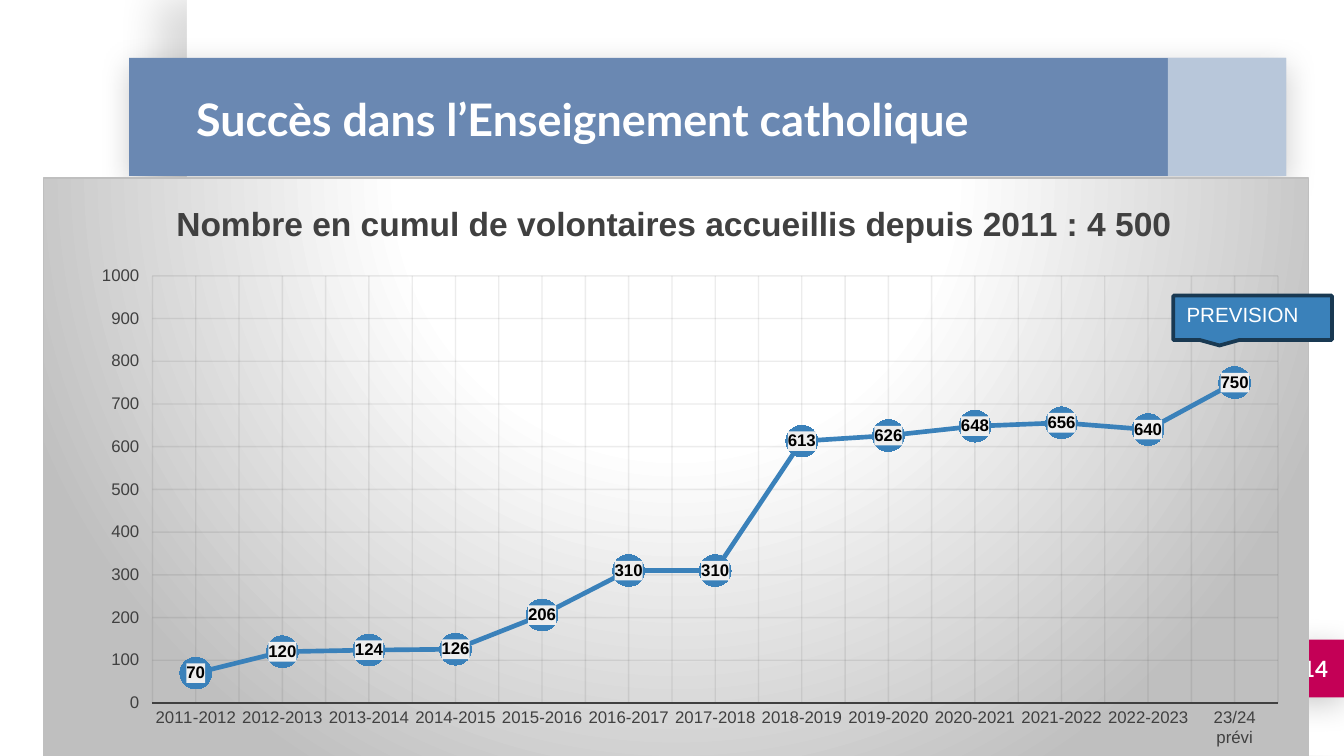
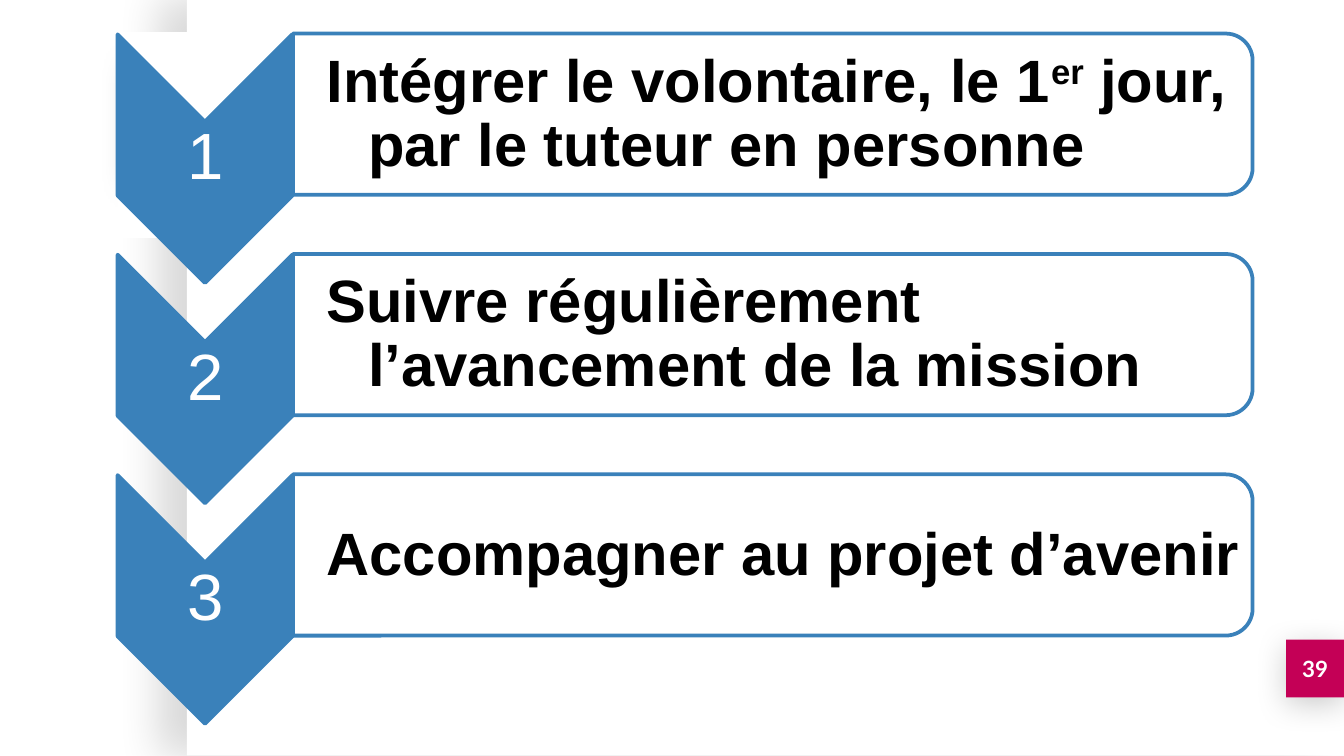
"""Build two slides: volunteer numbers as a line chart and three tutoring steps."""
import pptx
import pptx.chart.data
import pptx.dml.color
import pptx.enum.chart
import pptx.enum.shapes
import pptx.enum.text
import pptx.oxml
import pptx.oxml.ns
import pptx.util

PX = 9144
COLORS = {
    "white": "FFFFFF",
    "black": "000000",
    "blue": "3A81BA",
    "navy": "193952",
    "band": "6A88B2",
    "pink": "C40056",
    "silver": "BFBFBF",
    "label": "EEEEEE",
    "text": "404040",
    "grid": "0D0D0D",
}
SHAPES = pptx.enum.shapes.MSO_SHAPE
ALIGN = pptx.enum.text.PP_ALIGN
ANCHOR = pptx.enum.text.MSO_ANCHOR
PAGE_SHADOW = (15, 22.5, 15, 180)
BAND_SHADOW = (20, 16.9, 3.8, 90)
NUMBER_BOX = (957, 476, 43, 43)
VOLUNTEERS = {
    "2011-2012": 70, "2012-2013": 120, "2013-2014": 124, "2014-2015": 126,
    "2015-2016": 206, "2016-2017": 310, "2017-2018": 310, "2018-2019": 613,
    "2019-2020": 626, "2020-2021": 648, "2021-2022": 656, "2022-2023": 640,
    "23/24 prévi": 750,
}
STEPS = [
    ["Intégrer le volontaire, le 1", "er", " jour, par le tuteur en personne"],
    ["Suivre régulièrement l’avancement de la mission"],
    ["Accompagner au projet d’avenir"],
]
STEP_PITCH = 164


def rgb(name):
    """Return the named colour."""
    return pptx.dml.color.RGBColor.from_string(COLORS[name])


def place(*lengths):
    """Turn px lengths into EMU."""
    return [pptx.util.Emu(length * PX) for length in lengths]


def xml(tag, body, attributes=""):
    """Make an element in the drawing or chart namespace."""
    spaces = pptx.oxml.ns.nsdecls("a", "c")
    return pptx.oxml.parse_xml(f"<{tag} {spaces} {attributes}>{body}</{tag}>")


def fade(element, percent):
    """Set the opacity of every colour in an element."""
    for color in element.iter(pptx.oxml.ns.qn("a:srgbClr")):
        color.append(xml("a:alpha", "", f'val="{percent * 1000}"'))


def set_font(font, size, color, bold=False, name="Arial"):
    """Set face, size, weight and colour."""
    font.name = name
    font.size = pptx.util.Pt(size)
    font.bold = bold
    font.color.rgb = rgb(color)


def set_line(line, color, width):
    """Set a solid line."""
    line.color.rgb = rgb(color)
    line.width = pptx.util.Pt(width)


def add_block(page, kind, area, fill, line=None, opacity=None, shadow=None, rotation=0):
    """Add a filled preset shape."""
    block = page.shapes.add_shape(kind, *place(*area))
    block.rotation = rotation
    block.fill.solid()
    block.fill.fore_color.rgb = rgb(fill)
    if opacity:
        fade(block.element.spPr, opacity)
    if line:
        set_line(block.line, *line)
    else:
        block.line.fill.background()
    block.shadow.inherit = False
    if shadow:
        alpha, blur, distance, angle = shadow
        effects = block.element.spPr.find(pptx.oxml.ns.qn("a:effectLst"))
        effects.append(xml(
            "a:outerShdw",
            f'<a:srgbClr val="{COLORS["black"]}"><a:alpha val="{alpha * 1000}"/></a:srgbClr>',
            f'blurRad="{int(blur * 12700)}" dist="{int(distance * 12700)}" '
            f'dir="{angle * 60000}" algn="ctr" rotWithShape="0"'))
    return block


def set_frame(frame, insets, anchor=ANCHOR.MIDDLE):
    """Set wrapping, anchor and insets of a text frame."""
    frame.word_wrap = True
    frame.auto_size = pptx.enum.text.MSO_AUTO_SIZE.NONE
    frame.vertical_anchor = anchor
    (frame.margin_left, frame.margin_top,
     frame.margin_right, frame.margin_bottom) = place(*insets)


def add_text(page, area, text, size, color, insets, bold=False, name="Arial", align=ALIGN.CENTER):
    """Add a text box with one paragraph and return that paragraph."""
    box = page.shapes.add_textbox(*place(*area))
    set_frame(box.text_frame, insets)
    para = box.text_frame.paragraphs[0]
    para.text = text
    para.alignment = align
    for span in para.runs:
        set_font(span.font, size, color, bold, name)
    return para


def add_frame(page, number):
    """Draw the page panel, title band and page number."""
    add_block(page, SHAPES.RECTANGLE, (139, 0, 861, 562), "white", shadow=PAGE_SHADOW)
    add_block(page, SHAPES.RECTANGLE, NUMBER_BOX, "pink", shadow=BAND_SHADOW)
    add_block(page, SHAPES.RECTANGLE, (96, 43, 861, 88), "band", shadow=BAND_SHADOW)
    add_text(page, NUMBER_BOX, number, 12, "white", (10, 10, 10, 10), True, "Lato")


def set_title(page, text):
    """Fill the title placeholder and raise it above the band."""
    title = page.shapes.title
    title.left, title.top, title.width, title.height = place(136, 44, 737, 88)
    set_frame(title.text_frame, (10, 10, 10, 10))
    title.text_frame.text = text
    para = title.text_frame.paragraphs[0]
    para.alignment = ALIGN.LEFT
    set_font(para.runs[0].font, 24, "white", True, "Lato")
    page.shapes.element.append(title.element)


def set_layout(parent, index, target="", **fractions):
    """Give a chart part a fixed position."""
    old = parent.find(pptx.oxml.ns.qn("c:layout"))
    if old is not None:
        parent.remove(old)
    modes = '<c:xMode val="edge"/><c:yMode val="edge"/>'
    sizes = "".join(f'<c:{key} val="{value}"/>' for key, value in fractions.items())
    parent.insert(index, xml(
        "c:layout", f"<c:manualLayout>{target}{modes}{sizes}</c:manualLayout>"))


def style_axis(axis, tick):
    """Set labels, ticks and gridlines of an axis."""
    set_font(axis.tick_labels.font, 9, "text")
    axis.major_tick_mark = tick
    axis.minor_tick_mark = pptx.enum.chart.XL_TICK_MARK.NONE
    axis.has_major_gridlines = True
    set_line(axis.major_gridlines.format.line, "grid", 0.75)


def style_series(series):
    """Set line, markers and centred value labels."""
    series.smooth = False
    set_line(series.format.line, "blue", 2.5)
    series.marker.style = pptx.enum.chart.XL_MARKER_STYLE.CIRCLE
    series.marker.size = 17
    series.marker.format.fill.solid()
    series.marker.format.fill.fore_color.rgb = rgb("blue")
    series.marker.format.line.fill.background()
    labels = series.data_labels
    labels.show_value = True
    labels.position = pptx.enum.chart.XL_LABEL_POSITION.CENTER
    set_font(labels.font, 9, "black", True)


def style_gridlines(chart):
    """Make gridlines faint and add finer ones between categories."""
    for lines in chart.element.iter(pptx.oxml.ns.qn("c:majorGridlines")):
        fade(lines, 7)
    chart.category_axis.has_minor_gridlines = True
    stroke = (f'<a:ln w="9525"><a:solidFill><a:srgbClr val="{COLORS["grid"]}">'
              '<a:alpha val="7000"/></a:srgbClr></a:solidFill></a:ln>')
    for lines in chart.element.iter(pptx.oxml.ns.qn("c:minorGridlines")):
        lines.append(xml("c:spPr", stroke))


def style_backgrounds(chart):
    """Set the chart's gradient and the fill behind its labels."""
    stops = "".join(
        f'<a:gs pos="{position * 1000}"><a:srgbClr val="{COLORS[color]}"/></a:gs>'
        for position, color in [(0, "white"), (39, "white"), (100, "silver")])
    gradient = (
        f'<a:gradFill><a:gsLst>{stops}</a:gsLst><a:path path="circle">'
        '<a:fillToRect l="50000" t="-80000" r="50000" b="180000"/></a:path></a:gradFill>')
    border = (f'<a:ln w="9525"><a:solidFill><a:srgbClr val="{COLORS["silver"]}"/>'
              '</a:solidFill></a:ln>')
    root = chart.element
    root.find(pptx.oxml.ns.qn("c:chart")).addnext(xml("c:spPr", gradient + border))
    for labels in root.iter(pptx.oxml.ns.qn("c:dLbls")):
        labels.find(pptx.oxml.ns.qn("c:txPr")).addprevious(xml(
            "c:spPr",
            f'<a:solidFill><a:srgbClr val="{COLORS["label"]}"/></a:solidFill>'))


def add_volunteer_chart(page):
    """Add the line chart of volunteers per school year."""
    data = pptx.chart.data.CategoryChartData()
    data.categories = list(VOLUNTEERS)
    data.add_series("Series 1", list(VOLUNTEERS.values()))
    kind = pptx.enum.chart.XL_CHART_TYPE.LINE_MARKERS
    chart = page.shapes.add_chart(kind, *place(32, 132, 942, 442), data).chart
    chart.has_legend = False
    set_font(chart.font, 10, "black")
    chart.has_title = True
    heading = chart.chart_title.text_frame.paragraphs[0]
    heading.text = "Nombre en cumul de volontaires accueillis depuis 2011 : 4 500"
    set_font(heading.runs[0].font, 18, "text", True)
    tick = pptx.enum.chart.XL_TICK_MARK
    style_axis(chart.category_axis, tick.NONE)
    set_line(chart.category_axis.format.line, "text", 1.5)
    style_axis(chart.value_axis, tick.OUTSIDE)
    chart.value_axis.format.line.fill.background()
    chart.value_axis.minimum_scale = 0
    chart.value_axis.maximum_scale = 1000
    chart.value_axis.major_unit = 100
    chart.plots[0].vary_by_categories = False
    style_series(chart.plots[0].series[0])
    style_gridlines(chart)
    style_backgrounds(chart)
    body = chart.element.find(pptx.oxml.ns.qn("c:chart"))
    set_layout(body.find(pptx.oxml.ns.qn("c:title")), 1, x=0.1, y=0.03)
    set_layout(body.find(pptx.oxml.ns.qn("c:plotArea")), 0,
               '<c:layoutTarget val="inner"/>', x=0.086, y=0.165, w=0.89, h=0.721)


def add_callout(page, text):
    """Add the forecast callout."""
    callout = add_block(page, SHAPES.RECTANGULAR_CALLOUT, (873, 220, 118, 33),
                        "blue", ("navy", 2))
    set_frame(callout.text_frame, (10, 5, 10, 5), ANCHOR.TOP)
    callout.text_frame.text = text
    para = callout.text_frame.paragraphs[0]
    para.alignment = ALIGN.LEFT
    set_font(para.runs[0].font, 11, "white")


def add_step(page, index, parts):
    """Add one numbered chevron with its rounded panel."""
    shift = index * STEP_PITCH
    border = ("blue", 2)
    add_block(page, SHAPES.CHEVRON, (60, 53 + shift, 185, 130), "blue", border, rotation=90)
    number = add_text(page, (88, 90 + shift, 130, 56), str(index + 1), 35, "white", (2, 2, 2, 2))
    number.line_spacing = 0.9
    add_block(page, SHAPES.ROUND_2_SAME_RECTANGLE, (515, shift - 272, 120, 714),
              "white", border, opacity=90, rotation=90)
    para = add_text(page, (218, 31 + shift, 709, 109), "", 32, "black",
                    (25, 2, 2, 2), align=ALIGN.LEFT)
    para.level = 1
    para.line_spacing = 0.9
    properties = para._p.get_or_add_pPr()
    properties.set("marL", str(31 * PX))
    properties.set("indent", str(-31 * PX))
    for part in parts:
        span = para.add_run()
        span.text = part
        set_font(span.font, 32, "black", True)
        if part == "er":
            span._r.get_or_add_rPr().set("baseline", "30000")


def build_chart_page(deck):
    """Build the slide with the volunteer chart."""
    page = deck.slides.add_slide(deck.slide_layouts[5])
    add_frame(page, "14")
    add_block(page, SHAPES.RECTANGLE, (869, 43, 88, 88), "white", opacity=53)
    set_title(page, "Succès dans l’Enseignement catholique")
    add_volunteer_chart(page)
    add_callout(page, "PREVISION")


def build_steps_page(deck):
    """Build the slide with the three steps."""
    page = deck.slides.add_slide(deck.slide_layouts[6])
    add_frame(page, "39")
    add_block(page, SHAPES.RECTANGLE, (88, 24, 893, 153), "white")
    for index, parts in enumerate(STEPS):
        add_step(page, index, parts)


def main():
    """Build and save the deck."""
    deck = pptx.Presentation()
    deck.slide_width = pptx.util.Emu(1000 * PX)
    deck.slide_height = pptx.util.Emu(deck.slide_width * 9 // 16)
    build_chart_page(deck)
    build_steps_page(deck)
    deck.save("out.pptx")


if __name__ == "__main__":
    main()
